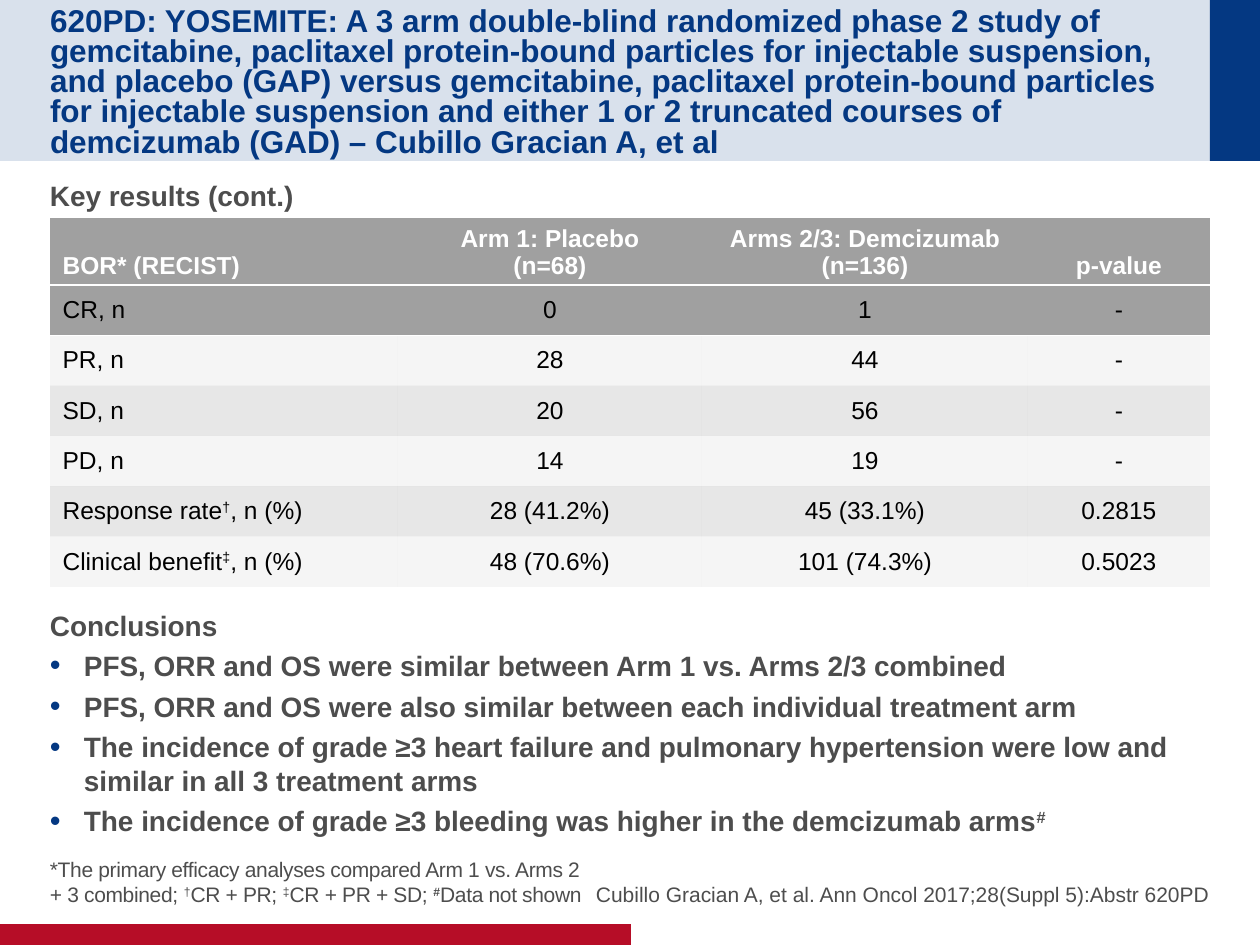
import dataclasses

import lxml.etree
import pptx
import pptx.dml.color
import pptx.enum.shapes
import pptx.enum.text
import pptx.oxml.ns
import pptx.util

ALIGN = pptx.enum.text.PP_ALIGN
ANCHOR = pptx.enum.text.MSO_ANCHOR


@dataclasses.dataclass(frozen=True)
class Theme:
    font: str = "Arial"
    navy: str = "043882"
    red: str = "B60D27"
    text: str = "4D4D4D"
    gray: str = "A0A0A0"
    black: str = "000000"
    white: str = "FFFFFF"
    title: int = 18
    body: int = 16
    table: int = 14
    note: int = 12


THEME = Theme()
TITLE = (
    "620PD: YOSEMITE: A 3 arm double-blind randomized phase 2 study of gemcitabine, "
    "paclitaxel protein-bound particles for injectable suspension, and placebo (GAP) versus "
    "gemcitabine, paclitaxel protein-bound particles for injectable suspension and either "
    "1 or 2 truncated courses of demcizumab (GAD) – Cubillo Gracian A, et al"
)
CONCLUSIONS = [
    "PFS, ORR and OS were similar between Arm 1 vs. Arms 2/3 combined",
    "PFS, ORR and OS were also similar between each individual treatment arm",
    "The incidence of grade ≥3 heart failure and pulmonary hypertension were low and "
    "similar in all 3 treatment arms",
    "The incidence of grade ≥3 bleeding was higher in the demcizumab arms^#^",
]
FOOTNOTE = (
    "*The primary efficacy analyses compared Arm 1 vs. Arms 2 \n"
    "+ 3 combined; ^†^CR + PR; ^‡^CR + PR + SD; ^#^Data not shown"
)
CITATION = "Cubillo Gracian A, et al. Ann Oncol 2017;28(Suppl 5):Abstr 620PD"
RESULTS = [
    ["BOR* (RECIST)", "Arm 1: Placebo\n(n=68)", "Arms 2/3: Demcizumab (n=136)", "p-value"],
    ["CR, n", "0", "1", "-"],
    ["PR, n", "28", "44", "-"],
    ["SD, n", "20", "56", "-"],
    ["PD, n", "14", "19", "-"],
    ["Response rate^†^, n (%)", "28 (41.2%)", "45 (33.1%)", "0.2815"],
    ["Clinical benefit^‡^, n (%)", "48 (70.6%)", "101 (74.3%)", "0.5023"],
]


def px(length):
    return pptx.util.Emu(round(length * 914400 / 126))


def rgb(color):
    return pptx.dml.color.RGBColor.from_string(color)


def add_child(parent, tag, **attributes):
    return lxml.etree.SubElement(parent, pptx.oxml.ns.qn(tag), attributes)


def set_fill(fill, color, opacity=100):
    fill.solid()
    fill.fore_color.rgb = rgb(color)
    if opacity < 100:
        color_node = next(fill._xPr.iter(pptx.oxml.ns.qn("a:srgbClr")))
        add_child(color_node, "a:alpha", val=str(opacity * 1000))


def add_bar(slide, left, top, width, height, color, opacity=100):
    bar = slide.shapes.add_shape(
        pptx.enum.shapes.MSO_SHAPE.RECTANGLE, px(left), px(top), px(width), px(height)
    )
    bar.shadow.inherit = False
    bar.line.fill.background()
    set_fill(bar.fill, color, opacity)


def write_text(para, text, size, color, bold=False, align=ALIGN.LEFT, spacing=0):
    para.alignment = align
    for index, part in enumerate(text.split("^")):
        for line_number, line in enumerate(part.split("\n")):
            if line_number:
                para.add_line_break()
            span = para.add_run()
            span.text = line
            span.font.name = THEME.font
            span.font.size = pptx.util.Pt(size)
            span.font.bold = bold or line == "#"
            span.font.color.rgb = rgb(color)
            properties = span.font._element
            if index % 2:
                properties.set("baseline", "30000")
            if spacing:
                properties.set("spc", str(spacing))


def add_bullet(para):
    properties = para._p.get_or_add_pPr()
    properties.set("marL", str(px(34)))
    properties.set("indent", str(-px(34)))
    color_node = add_child(properties, "a:buClr")
    add_child(color_node, "a:srgbClr", val=THEME.navy)
    add_child(properties, "a:buSzPct", val="110000")
    add_child(properties, "a:buFont", typeface=THEME.font)
    add_child(properties, "a:buChar", char="•")


def format_frame(frame, anchor, top=0, bottom=0):
    frame.word_wrap = True
    frame.auto_size = pptx.enum.text.MSO_AUTO_SIZE.NONE
    frame.vertical_anchor = anchor
    frame.margin_left = frame.margin_right = 0
    frame.margin_top, frame.margin_bottom = px(top), px(bottom)


def add_box(slide, left, top, width, height, anchor, inset=0):
    box = slide.shapes.add_textbox(px(left), px(top), px(width), px(height))
    format_frame(box.text_frame, anchor, inset, inset)
    return box.text_frame


def add_title(slide):
    title = slide.shapes.title
    title.left, title.top, title.width, title.height = px(50), px(25), px(1135), px(111)
    format_frame(title.text_frame, ANCHOR.MIDDLE, top=6)
    para = title.text_frame.paragraphs[0]
    para.line_spacing = 0.8
    write_text(para, TITLE, THEME.title, THEME.navy, bold=True)
    slide.shapes._spTree.append(title._element)


def add_body(slide):
    frame = add_box(slide, 50, 173, 1160, 654, ANCHOR.TOP, inset=6)
    for index, text in enumerate(["Key results (cont.)", "Conclusions"] + CONCLUSIONS):
        para = frame.add_paragraph() if index else frame.paragraphs[0]
        para.space_after = pptx.util.Pt(4)
        if index == 1:
            para.space_before = pptx.util.Pt(222)
        if index > 1:
            add_bullet(para)
        write_text(para, text, THEME.body, THEME.text, bold=True)


def add_border(cell, side):
    properties = cell._tc.get_or_add_tcPr()
    line = add_child(properties, side, w=str(pptx.util.Pt(1)))
    fill = add_child(line, "a:solidFill")
    add_child(fill, "a:srgbClr", val=THEME.white)


def add_results_table(slide):
    frame = slide.shapes.add_table(
        len(RESULTS), len(RESULTS[0]), px(50), px(218), px(1160), px(369)
    )
    table = frame.table
    style = next(table._tbl.iter(pptx.oxml.ns.qn("a:tableStyleId")))
    style.text = "{2D5ABB26-0587-4C30-8999-92F81FD0307C}"
    for column, width in zip(table.columns, [348, 304, 326, 182]):
        column.width = px(width)
    for row_index, values in enumerate(RESULTS):
        header = row_index == 0
        table.rows[row_index].height = px(67) if header else px(302 / 6)
        for column_index, text in enumerate(values):
            cell = table.cell(row_index, column_index)
            cell.vertical_anchor = ANCHOR.BOTTOM if header else ANCHOR.MIDDLE
            cell.margin_top = cell.margin_bottom = px(5)
            if row_index < 2:
                add_border(cell, "a:lnB" if header else "a:lnT")
            set_fill(cell.fill, THEME.gray, 100 if header else 25 if row_index % 2 else 10)
            write_text(
                cell.text_frame.paragraphs[0],
                text,
                THEME.table,
                THEME.white if header else THEME.black,
                bold=header,
                align=ALIGN.CENTER if column_index else ALIGN.LEFT,
            )


def add_note(slide, left, width, text, align=ALIGN.LEFT, spacing=0):
    frame = add_box(slide, left, 840, width, 67, ANCHOR.BOTTOM)
    write_text(frame.paragraphs[0], text, THEME.note, THEME.text, align=align, spacing=spacing)


def main():
    deck = pptx.Presentation()
    deck.slide_width, deck.slide_height = px(1260), px(945)
    slide = deck.slides.add_slide(deck.slide_layouts[5])
    add_bar(slide, 0, 0, 1260, 161, THEME.navy, opacity=15)
    add_bar(slide, 1210, 0, 50, 161, THEME.navy)
    add_bar(slide, 0, 924, 631, 21, THEME.red)
    add_body(slide)
    add_note(slide, 50, 553, FOOTNOTE, spacing=-20)
    add_note(slide, 567, 643, CITATION, align=ALIGN.RIGHT)
    add_title(slide)
    add_results_table(slide)
    deck.save("out.pptx")


if __name__ == "__main__":
    main()
